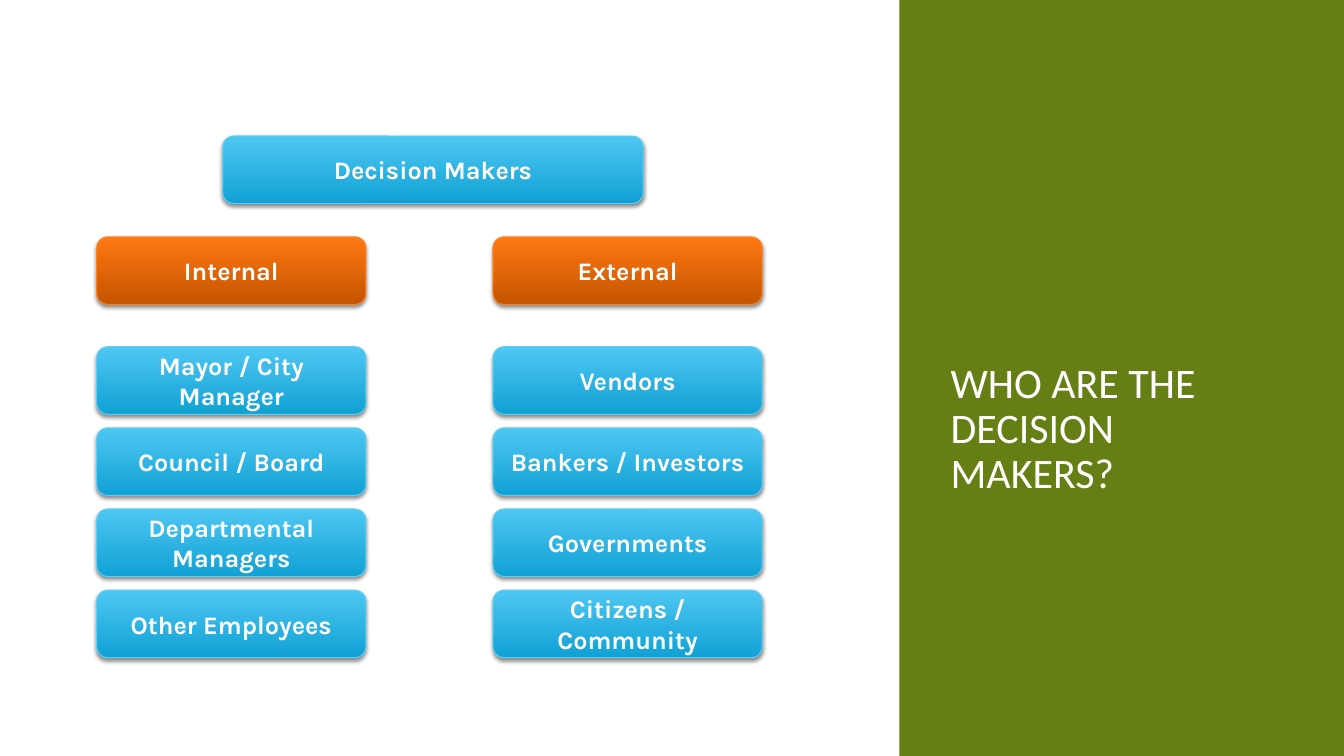
import pptx
import pptx.dml.color
import pptx.enum.shapes
import pptx.enum.text
import pptx.oxml
import pptx.oxml.ns
import pptx.util

Inches = pptx.util.Inches
Pt = pptx.util.Pt
RGBColor = pptx.dml.color.RGBColor
SHAPE = pptx.enum.shapes.MSO_SHAPE
ANCHOR = pptx.enum.text.MSO_ANCHOR
ALIGN = pptx.enum.text.PP_ALIGN

TITLE = "WHO ARE THE DECISION MAKERS?"
ROOT = "Decision Makers"
GROUPS = [
    ("Internal", ["Mayor / City Manager", "Council / Board",
                  "Departmental Managers", "Other Employees"]),
    ("External", ["Vendors", "Bankers / Investors",
                  "Governments", "Citizens / Community"]),
]

WHITE = RGBColor(0xFF, 0xFF, 0xFF)
GREEN = RGBColor(0x65, 0x7F, 0x14)
BLUE = (RGBColor(0x4E, 0xC7, 0xF2), RGBColor(0x11, 0xA1, 0xD4), RGBColor(0x5E, 0xCC, 0xF3))
ORANGE = (RGBColor(0xFF, 0x78, 0x13), RGBColor(0xC4, 0x54, 0x00), RGBColor(0xFF, 0x80, 0x21))

BOX_W, BOX_H = 2.67, 0.67
COL_X, COL_STEP = 0.96, 3.93
HEAD_Y = 2.35
ITEM_Y, ITEM_STEP = 3.44, 0.805

SHADOW = (
    '<a:outerShdw %s blurRad="%d" dist="%d" dir="5400000" algn="ctr" rotWithShape="0">'
    '<a:srgbClr val="000000"><a:alpha val="45000"/></a:srgbClr></a:outerShdw>'
    % (pptx.oxml.ns.nsdecls("a"), Pt(3.1), Pt(1.8))
)


def style_text(tf, text, font, size, bold=False):
    tf.word_wrap = True
    tf.text = text
    p = tf.paragraphs[0]
    r = p.runs[0]
    r.font.name = font
    r.font.size = Pt(size)
    r.font.bold = bold
    r.font.color.rgb = WHITE
    return p


def add_box(slide, text, x, y, colors, w=BOX_W):
    top, bottom, edge = colors
    sp = slide.shapes.add_shape(SHAPE.ROUNDED_RECTANGLE,
                                Inches(x), Inches(y), Inches(w), Inches(BOX_H))
    sp.fill.gradient()
    sp.fill.gradient_angle = 270
    for stop, color in zip(sp.fill.gradient_stops, (top, bottom)):
        stop.color.rgb = color
    sp.line.color.rgb = edge
    sp.line.width = Pt(0.75)
    sp.shadow.inherit = False
    effects = sp._element.spPr.find(pptx.oxml.ns.qn("a:effectLst"))
    effects.append(pptx.oxml.parse_xml(SHADOW))
    sp.text_frame.vertical_anchor = ANCHOR.MIDDLE
    p = style_text(sp.text_frame, text, "Karla", 18, bold=True)
    p.alignment = ALIGN.CENTER


def add_title_panel(slide):
    sp = slide.shapes.add_shape(SHAPE.RECTANGLE, Inches(8.92), 0, Inches(4.41), Inches(7.5))
    sp.fill.solid()
    sp.fill.fore_color.rgb = GREEN
    sp.line.fill.background()
    sp.shadow.inherit = False
    title = slide.shapes.add_textbox(Inches(9.33), Inches(1.84), Inches(3.42), Inches(3.15))
    title.text_frame.vertical_anchor = ANCHOR.BOTTOM
    p = style_text(title.text_frame, TITLE, "Calibri", 30)
    p.line_spacing = 0.9


def main():
    prs = pptx.Presentation()
    prs.slide_width = Inches(13.33)
    prs.slide_height = Inches(7.5)
    slide = prs.slides.add_slide(prs.slide_layouts[6])

    add_title_panel(slide)
    add_box(slide, ROOT, 2.21, 1.35, BLUE, w=4.17)
    for col, (heading, items) in enumerate(GROUPS):
        x = COL_X + col * COL_STEP
        add_box(slide, heading, x, HEAD_Y, ORANGE)
        for row, item in enumerate(items):
            add_box(slide, item, x, ITEM_Y + row * ITEM_STEP, BLUE)

    prs.save("out.pptx")


if __name__ == "__main__":
    main()
